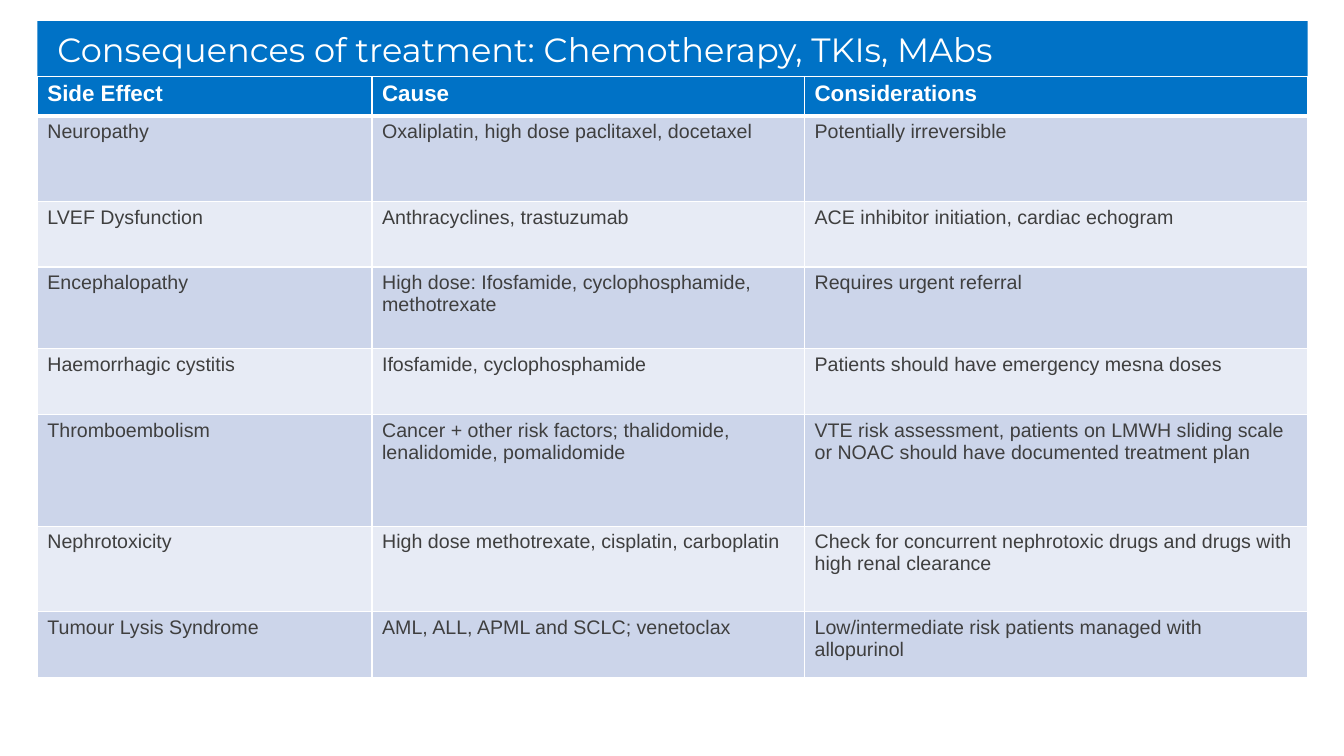
from lxml import etree
from pptx import Presentation
from pptx import util as u
from pptx.dml.color import RGBColor
from pptx.enum import shapes, text
from pptx.oxml import ns

# Content
TITLE = "Consequences of treatment: Chemotherapy, TKIs, MAbs"
ROWS = [  # height, side effect, cause, considerations
    (0.39, "Side Effect", "Cause", "Considerations"),
    (0.85, "Neuropathy", "Oxaliplatin, high dose paclitaxel, docetaxel",
     "Potentially irreversible"),
    (0.65, "LVEF Dysfunction", "Anthracyclines, trastuzumab",
     "ACE inhibitor initiation, cardiac echogram"),
    (0.81, "Encephalopathy",
     "High dose: Ifosfamide, cyclophosphamide, methotrexate",
     "Requires urgent referral"),
    (0.65, "Haemorrhagic cystitis", "Ifosfamide, cyclophosphamide",
     "Patients should have emergency mesna doses"),
    (1.11, "Thromboembolism",
     "Cancer + other risk factors; thalidomide, lenalidomide, pomalidomide",
     "VTE risk assessment, patients on LMWH sliding scale or NOAC should "
     "have documented treatment plan"),
    (0.85, "Nephrotoxicity", "High dose methotrexate, cisplatin, carboplatin",
     "Check for concurrent nephrotoxic drugs and drugs with high renal clearance"),
    (0.65, "Tumour Lysis Syndrome", "AML, ALL, APML and SCLC; venetoclax",
     "Low/intermediate risk patients managed with allopurinol"),
]
COL_WIDTHS = [3.32, 4.29, 4.99]
LEFT, TOP, TITLE_H = 0.37, 0.21, 0.55
WIDTH = sum(COL_WIDTHS)
BLUE, WHITE, GREY = "0072C6", "FFFFFF", "3F3F3F"
BANDS = ["E7EBF5", "CCD5EA"]  # even rows, odd rows


def paint(fill, color):
    fill.solid()
    fill.fore_color.rgb = RGBColor.from_string(color)


def style(p, font, size, color, bold=False):
    for r in p.runs:
        r.font.name, r.font.size, r.font.bold = font, u.Pt(size), bold
        r.font.color.rgb = RGBColor.from_string(color)


def add_borders(cell, top, bottom):
    tc_pr = cell._tc.get_or_add_tcPr()
    for side, width in (("L", 1), ("R", 1), ("T", top), ("B", bottom)):
        ln = etree.SubElement(tc_pr, ns.qn("a:ln" + side), w=str(u.Pt(width)))
        fill = etree.SubElement(ln, ns.qn("a:solidFill"))
        etree.SubElement(fill, ns.qn("a:srgbClr"), val=WHITE)


prs = Presentation()
prs.slide_width, prs.slide_height = u.Inches(13.33), u.Inches(7.5)
s = prs.slides.add_slide(prs.slide_layouts[6])

# Title bar
sp = s.shapes.add_shape(shapes.MSO_SHAPE.RECTANGLE, u.Inches(LEFT),
                        u.Inches(TOP), u.Inches(WIDTH), u.Inches(TITLE_H))
sp.shadow.inherit = False
paint(sp.fill, BLUE)
sp.line.fill.background()
tf = sp.text_frame
tf.text = TITLE
tf.margin_left = u.Inches(0.2)
tf.vertical_anchor = text.MSO_ANCHOR.MIDDLE
tf.paragraphs[0].alignment = text.PP_ALIGN.LEFT
style(tf.paragraphs[0], "Montserrat", 24, WHITE)

# Side effect table
table = s.shapes.add_table(
    len(ROWS), len(COL_WIDTHS), u.Inches(LEFT), u.Inches(TOP + TITLE_H),
    u.Inches(WIDTH), u.Inches(sum(row[0] for row in ROWS))).table
for column, width in zip(table.columns, COL_WIDTHS):
    column.width = u.Inches(width)
for i, (height, *labels) in enumerate(ROWS):
    table.rows[i].height = u.Inches(height)
    header = i == 0
    for j, label in enumerate(labels):
        cell = table.cell(i, j)
        cell.text = label
        add_borders(cell, top=3 if i == 1 else 1, bottom=3 if header else 1)
        paint(cell.fill, BLUE if header else BANDS[i % 2])
        style(cell.text_frame.paragraphs[0], "Arial", 16 if header else 14,
              WHITE if header else GREY, header)

prs.save("out.pptx")
